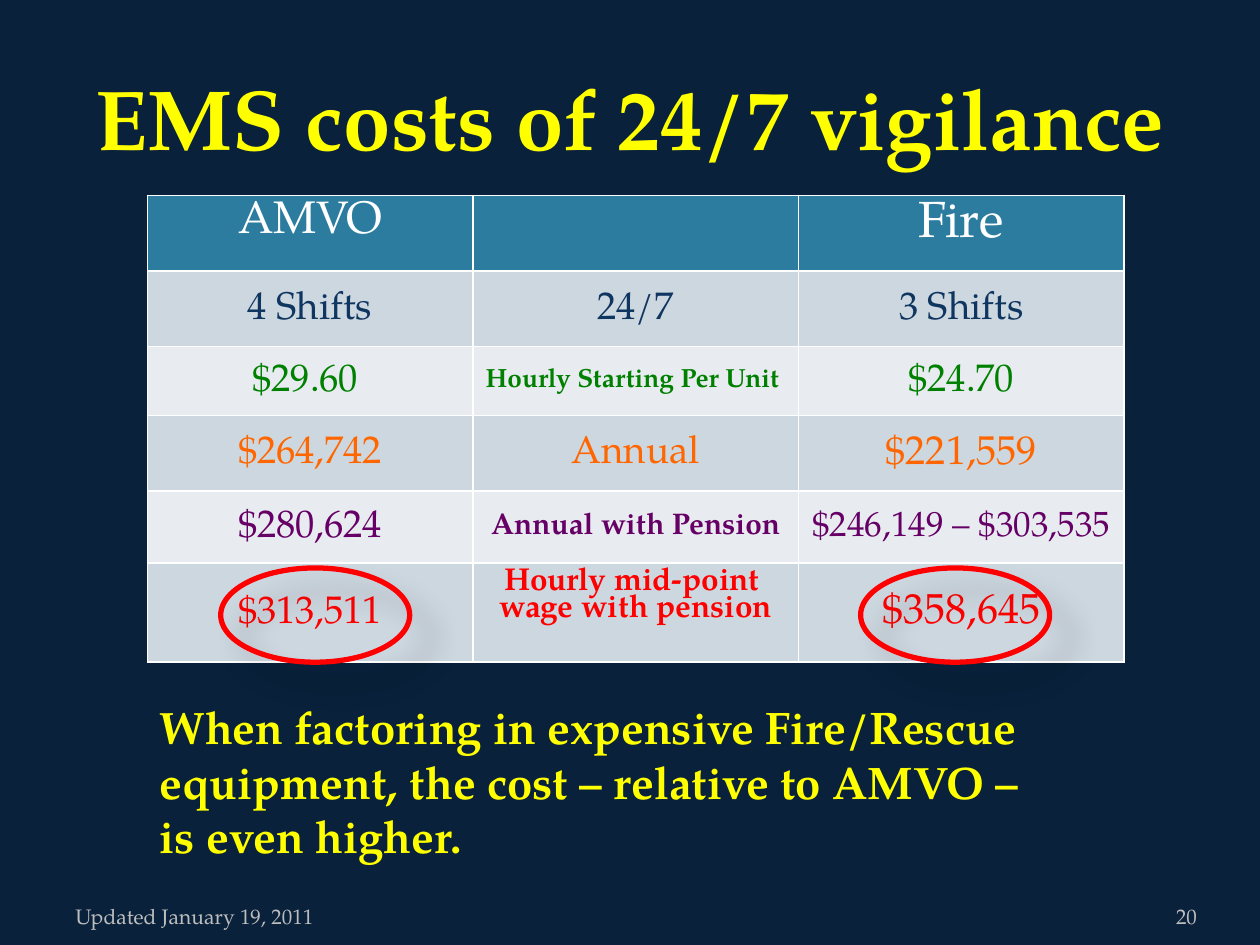
from lxml import etree
from pptx import Presentation
from pptx.dml.color import RGBColor
from pptx.enum.shapes import MSO_SHAPE
from pptx.enum.text import MSO_ANCHOR, MSO_AUTO_SIZE, PP_ALIGN
from pptx.oxml import parse_xml
from pptx.oxml.ns import nsdecls, qn
from pptx.util import Cm, Pt

LEFT, CENTER, RIGHT = PP_ALIGN.LEFT, PP_ALIGN.CENTER, PP_ALIGN.RIGHT
TOP, MIDDLE, BOTTOM = MSO_ANCHOR.TOP, MSO_ANCHOR.MIDDLE, MSO_ANCHOR.BOTTOM
OVAL = MSO_SHAPE.OVAL
NO_AUTOFIT = MSO_AUTO_SIZE.NONE

FONT = "TeX Gyre Pagella"
NAVY = RGBColor(0x09, 0x21, 0x3B)
YELLOW = RGBColor(0xFF, 0xFF, 0x00)
WHITE = RGBColor(0xFF, 0xFF, 0xFF)
TEAL = RGBColor(0x2C, 0x7C, 0x9F)
BAND_DARK = RGBColor(0xCD, 0xD7, 0xDF)
BAND_LIGHT = RGBColor(0xE8, 0xEC, 0xF0)
BLUE = RGBColor(0x0F, 0x36, 0x61)
GREEN = RGBColor(0x00, 0x80, 0x00)
ORANGE = RGBColor(0xFF, 0x66, 0x00)
PURPLE = RGBColor(0x66, 0x00, 0x66)
RED = RGBColor(0xFF, 0x00, 0x00)
GRAY = RGBColor(0xBD, 0xBD, 0xBD)

AMBULANCE = "AMVO"

# Row height in cm, text colour, then (text, size) for ambulance, measure and fire
COST_ROWS = [
    (1.52, WHITE, [(AMBULANCE, 26), ("", 18), ("Fire", 29)]),
    (1.52, BLUE, [("4 Shifts", 22), ("24/7", 22), ("3 Shifts", 22)]),
    (1.40, GREEN, [("$29.60 ", 22), ("Hourly Starting Per Unit ", 15), ("$24.70", 22)]),
    (1.52, ORANGE, [("$264,742", 22), ("Annual", 22), ("$221,559", 23)]),
    (1.45, PURPLE, [("$280,624", 22), ("Annual with Pension", 17),
                    ("$246,149 – $303,535", 20)]),
    (2.00, RED, [("$313,511", 22), ("Hourly mid-point \nwage with pension", 18),
                 ("$358,645", 24)]),
]


def write(frame, text, size, color, bold=False, align=LEFT, spacing=None):
    frame.word_wrap = True
    frame.text = text
    for paragraph in frame.paragraphs:
        paragraph.alignment = align
        if spacing:
            paragraph.line_spacing = spacing
        for run in paragraph.runs:
            font = run.font
            font.name, font.size, font.bold = FONT, Pt(size), bold
            font.color.rgb = color


def add_title(slide, left, top, width, height):
    title = slide.shapes.title
    title.left, title.top, title.width, title.height = left, top, width, height
    frame = title.text_frame
    frame.auto_size = NO_AUTOFIT
    frame.vertical_anchor = MIDDLE
    frame.margin_left = frame.margin_right = Cm(0.18)
    frame.margin_top = frame.margin_bottom = Cm(0.1)
    write(frame, "EMS costs of 24/7 vigilance", 48.6, YELLOW, bold=True, align=CENTER)


def border_cell(cell):
    properties = cell._tc.get_or_add_tcPr()
    for position, side in enumerate(("lnL", "lnR", "lnT", "lnB")):
        properties.insert(position, parse_xml(
            f'<a:{side} {nsdecls("a")} w="{Pt(1)}"><a:solidFill>'
            f'<a:srgbClr val="{WHITE}"/></a:solidFill></a:{side}>'))


def add_cost_table(slide, left, top, width, height):
    table = slide.shapes.add_table(len(COST_ROWS), 3, left, top, width, height).table
    for column in table.columns:
        column.width = width // 3
    for r, (row_height, color, entries) in enumerate(COST_ROWS):
        table.rows[r].height = Cm(row_height)
        band = TEAL if r == 0 else BAND_DARK if r % 2 else BAND_LIGHT
        for c, (text, size) in enumerate(entries):
            cell = table.cell(r, c)
            cell.fill.solid()
            cell.fill.fore_color.rgb = band
            border_cell(cell)
            cell.margin_left = cell.margin_right = Cm(0.18)
            cell.margin_top = cell.margin_bottom = Cm(0.1)
            cell.vertical_anchor = TOP if r == 0 or "\n" in text else MIDDLE
            write(cell.text_frame, text, size, color, bold=size < 20,
                  align=CENTER, spacing=0.9)


def add_total_ring(slide, left, top, width, height):
    ring = slide.shapes.add_shape(OVAL, left, top, width, height)
    ring.fill.background()
    ring.line.color.rgb = RED
    ring.line.width = Pt(3)
    ring.shadow.inherit = False
    effects = ring._element.spPr.find(qn("a:effectLst"))
    shadow = etree.SubElement(effects, qn("a:outerShdw"), blurRad=str(Pt(15)),
                              dist=str(Pt(18)), dir=str(45 * 60000), rotWithShape="0")
    shade = etree.SubElement(shadow, qn("a:srgbClr"), val="000000")
    etree.SubElement(shade, qn("a:alpha"), val="26000")


def add_costs(slide, left, top, width, height):
    """Table with both bottom-row totals ringed."""
    add_cost_table(slide, left, top, width, height)
    ring_width, ring_height = Cm(3.81), Cm(1.9)
    for offset in (Cm(1.48), Cm(14.38)):
        add_total_ring(slide, left + offset, top + height - ring_height,
                       ring_width, ring_height)


def add_conclusion(slide, left, top, width, height):
    frame = slide.shapes.add_textbox(left, top, width, height).text_frame
    write(frame, "When factoring in expensive Fire/Rescue equipment, "
          f"the cost – relative to {AMBULANCE} –\vis even higher.", 26, YELLOW, bold=True)


def add_footer(slide, left, top, width, height):
    date_width, number_width = Cm(5.92), Cm(2.11)
    date = slide.shapes.add_textbox(left, top, date_width, height).text_frame
    number = slide.shapes.add_textbox(left + width - number_width, top,
                                      number_width, height).text_frame
    number.margin_left = number.margin_right = 0
    for frame, text, align in ((date, "Updated January 19, 2011", LEFT),
                               (number, "20", RIGHT)):
        frame.vertical_anchor = BOTTOM
        write(frame, text, 12, GRAY, align=align)


def main():
    deck = Presentation()
    deck.slide_width, deck.slide_height = Cm(25.4), Cm(19.05)
    slide = deck.slides.add_slide(deck.slide_layouts.get_by_name("Title Only"))
    slide.background.fill.solid()
    slide.background.fill.fore_color.rgb = NAVY
    add_title(slide, Cm(1.27), Cm(0.76), Cm(22.86), Cm(3.18))
    add_costs(slide, Cm(2.97), Cm(3.94), Cm(19.69), Cm(9.41))
    add_conclusion(slide, Cm(2.97), Cm(13.97), Cm(19.69), Cm(3.58))
    add_footer(slide, Cm(1.27), Cm(17.83), Cm(22.86), Cm(1.02))
    deck.save("out.pptx")


if __name__ == "__main__":
    main()
